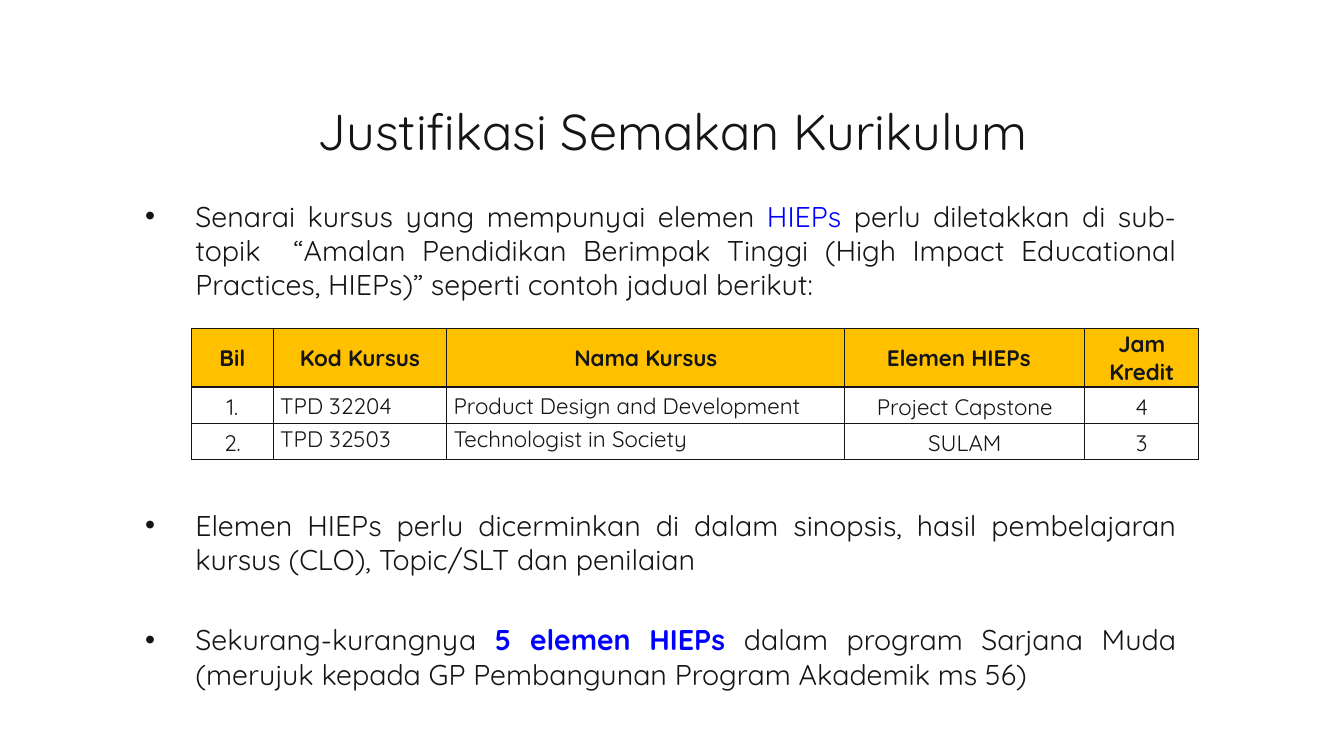
from dataclasses import dataclass

from lxml import etree
from pptx import Presentation
from pptx.dml.color import RGBColor
from pptx.enum import text
from pptx.oxml import ns
from pptx.util import Inches, Pt

FONT = "Quicksand"
INK = RGBColor(0x14, 0x15, 0x16)
BLUE = RGBColor(0x00, 0x00, 0xFF)
AMBER = RGBColor(0xFF, 0xC0, 0x00)
BODY_SIZE = 20.4
CELL_SIZE = 16
LEFT, CENTER, JUSTIFY = text.PP_ALIGN.LEFT, text.PP_ALIGN.CENTER, text.PP_ALIGN.JUSTIFY
TOP, MIDDLE = text.MSO_ANCHOR.TOP, text.MSO_ANCHOR.MIDDLE


@dataclass
class Piece:
    text: str
    color: RGBColor = INK
    bold: bool = False


@dataclass
class Bullet:
    pieces: list[Piece]
    space_before: float = 0


@dataclass
class Column:
    header: str
    width: float
    align: text.PP_ALIGN = CENTER
    header_right: float = 0.07


BULLETS = [
    Bullet([
        Piece("Senarai kursus yang mempunyai elemen "),
        Piece("HIEPs", BLUE),
        Piece(" perlu diletakkan di sub-topik  “Amalan Pendidikan Berimpak Tinggi "
              "(High Impact Educational Practices, HIEPs)” seperti contoh jadual berikut:"),
    ]),
    Bullet([
        Piece("Elemen HIEPs perlu dicerminkan di dalam sinopsis, hasil pembelajaran "
              "kursus (CLO), Topic/SLT dan penilaian"),
    ], 147.6),
    Bullet([
        Piece("Sekurang-kurangnya "),
        Piece("5 elemen HIEPs ", BLUE, True),
        Piece("dalam program Sarjana Muda (merujuk kepada GP Pembangunan "
              "Program Akademik ms 56)"),
    ], 32.7),
]
COLUMNS = [
    Column("Bil", 0.81),
    Column("Kod Kursus", 1.72, LEFT),
    Column("Nama Kursus", 3.95, LEFT),
    Column("Elemen HIEPs", 2.38, header_right=0.19),
    Column("Jam Kredit", 1.13),
]
COURSES = [
    ("1.", "TPD 32204", "Product Design and Development", "Project Capstone", "4"),
    ("2.", "TPD 32503", "Technologist in Society", "SULAM", "3"),
]
ROW_HEIGHTS = [0.58, 0.36, 0.36]


def style(font, size: float, color: RGBColor = INK, bold: bool = False) -> None:
    font.name, font.size, font.bold = FONT, Pt(size), bold
    font.color.rgb = color


def add_box(s, left: float, top: float, width: float, height: float):
    tf = s.shapes.add_textbox(*map(Inches, (left, top, width, height))).text_frame
    tf.word_wrap = True
    return tf


def add_title(s, title: str) -> None:
    tf = add_box(s, 0.67, 0.67, 12, 1.25)
    tf.vertical_anchor = MIDDLE
    tf.text = title
    p = tf.paragraphs[0]
    p.alignment = CENTER
    style(p.runs[0].font, 36)


def add_bullets(s, bullets: list[Bullet]) -> None:
    tf = add_box(s, 1.34, 1.92, 10.42, 5.06)
    for i, bullet in enumerate(bullets):
        p = tf.add_paragraph() if i else tf.paragraphs[0]
        p.alignment = JUSTIFY
        p.space_before = Pt(bullet.space_before)
        pPr = p._p.get_or_add_pPr()
        pPr.set("marL", str(Inches(0.5)))
        pPr.set("indent", str(-Inches(0.5)))
        etree.SubElement(pPr, ns.qn("a:buFont"), typeface="Arial")
        etree.SubElement(pPr, ns.qn("a:buChar"), char="•")
        for piece in bullet.pieces:
            r = p.add_run()
            r.text = piece.text
            style(r.font, BODY_SIZE, piece.color, piece.bold)


def add_borders(cell) -> None:
    tcPr = cell._tc.get_or_add_tcPr()
    for i, side in enumerate(("lnL", "lnR", "lnT", "lnB")):
        ln = etree.Element(ns.qn(f"a:{side}"), w=str(Pt(1)))
        fill = etree.SubElement(ln, ns.qn("a:solidFill"))
        etree.SubElement(fill, ns.qn("a:srgbClr"), val=str(INK))
        tcPr.insert(i, ln)


def fill_cell(cell, value: str, column: Column, row: int) -> None:
    header = row == 0
    cell.margin_left = Inches(0.07)
    cell.margin_right = Inches(column.header_right if header else 0.07)
    cell.margin_top = cell.margin_bottom = 0
    cell.vertical_anchor = TOP if row == 2 and column.align == LEFT else MIDDLE
    cell.text = value
    p = cell.text_frame.paragraphs[0]
    p.alignment = CENTER if header else column.align
    style(p.runs[0].font, CELL_SIZE, bold=header)
    if header:
        cell.fill.solid()
        cell.fill.fore_color.rgb = AMBER
    else:
        cell.fill.background()
        p.line_spacing = 1.15 if column.align == CENTER else 1.07
        p.space_after = Pt(0 if column.align == CENTER else 8)
    add_borders(cell)


def add_course_table(s) -> None:
    rows = [tuple(c.header for c in COLUMNS), *COURSES]
    table = s.shapes.add_table(len(rows), len(COLUMNS), Inches(1.9), Inches(3.26),
                               Inches(9.99), Inches(1.3)).table
    table.first_row = table.horz_banding = False
    for i, column in enumerate(COLUMNS):
        table.columns[i].width = Inches(column.width)
    for i, values in enumerate(rows):
        table.rows[i].height = Inches(ROW_HEIGHTS[i])
        for j, value in enumerate(values):
            fill_cell(table.cell(i, j), value, COLUMNS[j], i)


def main() -> None:
    prs = Presentation()
    prs.slide_width, prs.slide_height = Inches(13.33), Inches(7.5)
    s = prs.slides.add_slide(prs.slide_layouts[6])
    add_title(s, "Justifikasi Semakan Kurikulum")
    add_bullets(s, BULLETS)
    add_course_table(s)
    prs.save("out.pptx")


if __name__ == "__main__":
    main()
